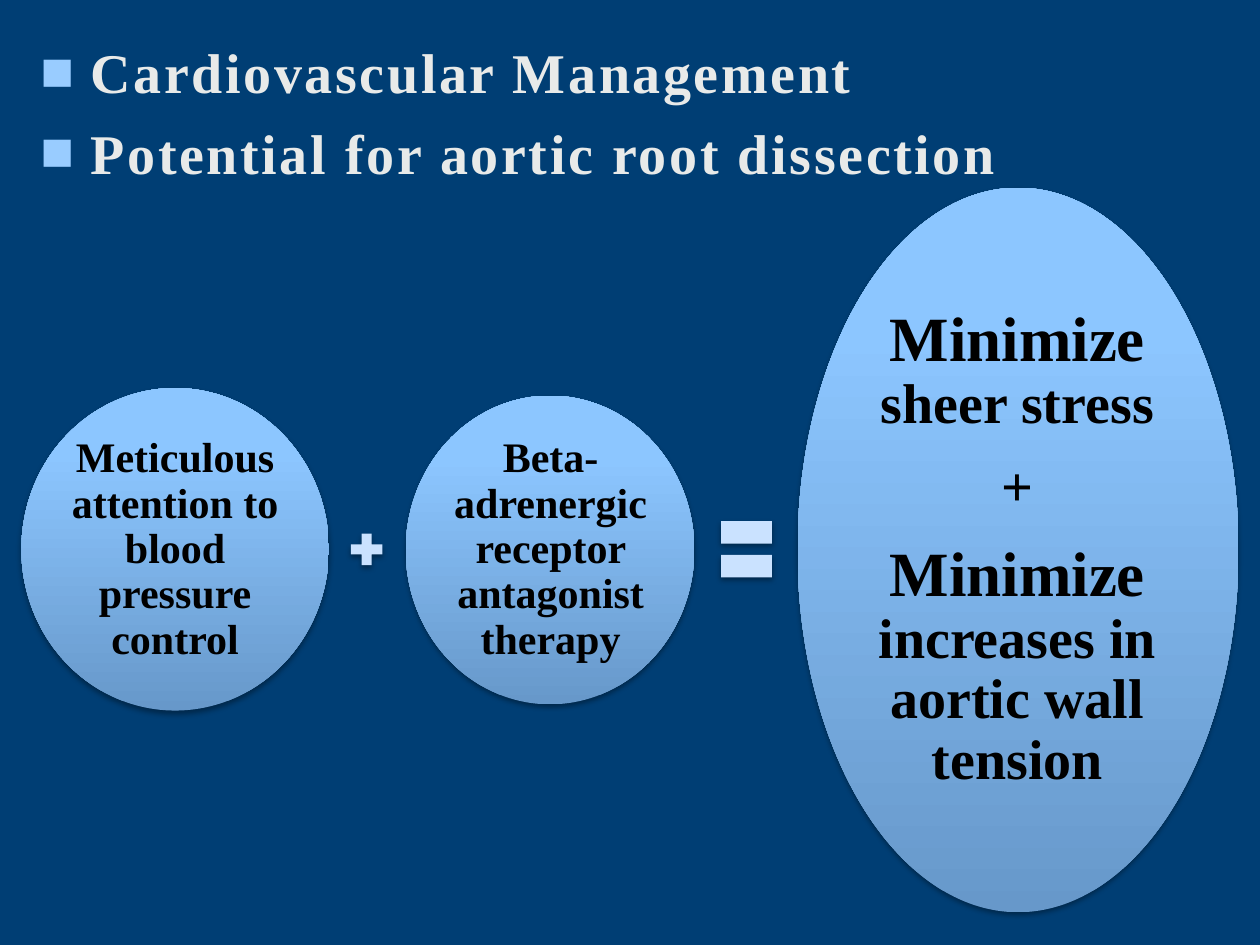
from dataclasses import dataclass
from typing import Optional

from lxml import etree
from pptx import Presentation
from pptx import util as u
from pptx.dml.color import RGBColor
from pptx.enum import shapes, text
from pptx.oxml import parse_xml
from pptx.oxml.ns import nsdecls, qn

FONT = "Times New Roman"
COLORS = {
    "background": "003E74",
    "heading": "E8EAE9",
    "bullet": "99CCFF",
    "operator": "CAE2FF",
    "label": "000000",
    "shadow": "000000",
}
# Gradient stops run from the bottom of an ellipse to its top
GRADIENT = [(0, "6798CA"), (80, "8CC6FF"), (100, "8EC7FF")]


@dataclass
class Box:
    left: float
    top: float
    width: float
    height: float

    def lengths(self) -> list:
        return [u.Inches(n) for n in (self.left, self.top, self.width, self.height)]


@dataclass
class Term:
    """An ellipse and its label; each paragraph is a list of (words, size)."""
    ellipse: Box
    label: Box
    inset: float
    paragraphs: list


@dataclass
class Operator:
    kind: shapes.MSO_SHAPE
    box: Box


HEADINGS = ["Cardiovascular Management", "Potential for aortic root dissection"]

TERMS = [
    Term(Box(0.17, 3.08, 2.44, 2.56), Box(0.53, 3.46, 1.72, 1.81), 0.03,
         [[("Meticulous attention to blood pressure control", 24)]]),
    Term(Box(3.22, 3.14, 2.29, 2.45), Box(3.56, 3.5, 1.62, 1.73), 0.03,
         [[("Beta-adrenergic receptor antagonist therapy", 24)]]),
    Term(Box(6.33, 1.49, 3.5, 5.75), Box(6.84, 2.33, 2.47, 4.06), 0.05,
         [[("Minimize", 36), (" sheer stress", 32)],
          [("+", 32)],
          [("Minimize ", 36), ("increases in aortic wall tension", 32)]]),
]

OPERATORS = [
    Operator(shapes.MSO_SHAPE.MATH_PLUS, Box(2.74, 4.19, 0.34, 0.34)),
    Operator(shapes.MSO_SHAPE.MATH_EQUAL, Box(5.65, 3.98, 0.55, 0.76)),
]


def add_text(paragraph, words: str, *, size: float, color: str,
             tracking: Optional[float] = None) -> None:
    run = paragraph.add_run()
    run.text = words
    run.font.name = FONT
    run.font.size = u.Pt(size)
    run.font.bold = True
    run.font.color.rgb = RGBColor.from_string(COLORS[color])
    if tracking:
        run.font._element.set("spc", str(int(tracking * 100)))


def add_bullet(paragraph, *, indent: float, hanging: float) -> None:
    properties = paragraph._p.get_or_add_pPr()
    properties.set("marL", str(u.Inches(indent)))
    properties.set("indent", str(-u.Inches(hanging)))
    color = etree.SubElement(properties, qn("a:buClr"))
    etree.SubElement(color, qn("a:srgbClr"), val=COLORS["bullet"])
    etree.SubElement(properties, qn("a:buFont"), typeface=FONT)
    etree.SubElement(properties, qn("a:buChar"), char="■")


def add_shadow(shape) -> None:
    shape._element.spPr.append(parse_xml(
        f'<a:effectLst {nsdecls("a")}>'
        f'<a:outerShdw blurRad="{u.Pt(3.1)}" dist="{u.Pt(1.8)}" dir="5400000" rotWithShape="0">'
        f'<a:srgbClr val="{COLORS["shadow"]}"><a:alpha val="35000"/></a:srgbClr>'
        '</a:outerShdw></a:effectLst>'))


def add_figure(slide, kind: shapes.MSO_SHAPE, box: Box, color: Optional[str] = None) -> None:
    """Draw a shadowed shape, in one colour if given, otherwise in the gradient."""
    shape = slide.shapes.add_shape(kind, *box.lengths())
    shape.line.fill.background()
    if color:
        shape.fill.solid()
        shape.fill.fore_color.rgb = RGBColor.from_string(COLORS[color])
    else:
        shape.fill.gradient()
        gradient = shape._element.spPr.find(qn("a:gradFill"))
        stops = "".join(f'<a:gs pos="{position * 1000}"><a:srgbClr val="{value}"/></a:gs>'
                        for position, value in GRADIENT)
        gradient.getparent().replace(gradient, parse_xml(
            f'<a:gradFill rotWithShape="1" {nsdecls("a")}><a:gsLst>{stops}</a:gsLst>'
            '<a:lin ang="16200000" scaled="0"/></a:gradFill>'))
    add_shadow(shape)


def add_term(slide, term: Term) -> None:
    add_figure(slide, shapes.MSO_SHAPE.OVAL, term.ellipse)
    frame = slide.shapes.add_textbox(*term.label.lengths()).text_frame
    frame.word_wrap = True
    frame.vertical_anchor = text.MSO_ANCHOR.MIDDLE
    frame.margin_left = frame.margin_right = u.Inches(term.inset)
    frame.margin_top = frame.margin_bottom = u.Inches(term.inset)
    for index, runs in enumerate(term.paragraphs):
        paragraph = frame.add_paragraph() if index else frame.paragraphs[0]
        paragraph.alignment = text.PP_ALIGN.CENTER
        paragraph.line_spacing = 0.9
        paragraph.space_after = u.Pt(round(0.4 * runs[-1][1]))
        for words, size in runs:
            add_text(paragraph, words, size=size, color="label")


def add_headings(slide) -> None:
    body = slide.placeholders[1]
    body.left, body.top, body.width, body.height = Box(0.17, 0.25, 9.42, 5).lengths()
    frame = body.text_frame
    frame.word_wrap = True
    frame.auto_size = text.MSO_AUTO_SIZE.NONE
    frame.vertical_anchor = text.MSO_ANCHOR.TOP
    for index, words in enumerate(HEADINGS):
        paragraph = frame.add_paragraph() if index else frame.paragraphs[0]
        add_bullet(paragraph, indent=0.45, hanging=0.4)
        paragraph.space_before = u.Pt(7.5 if index else 0)
        add_text(paragraph, words, size=32, color="heading", tracking=1.5)


def main() -> None:
    presentation = Presentation()
    presentation.slide_width, presentation.slide_height = u.Inches(10), u.Inches(7.5)
    slide = presentation.slides.add_slide(presentation.slide_layouts[1])
    slide.background.fill.solid()
    slide.background.fill.fore_color.rgb = RGBColor.from_string(COLORS["background"])

    # The slide has a list but no title
    title = slide.shapes.title._element
    title.getparent().remove(title)
    add_headings(slide)

    # Equation: term + term = result
    for term in TERMS:
        add_term(slide, term)
    for operator in OPERATORS:
        add_figure(slide, operator.kind, operator.box, "operator")

    presentation.save("out.pptx")


if __name__ == "__main__":
    main()
